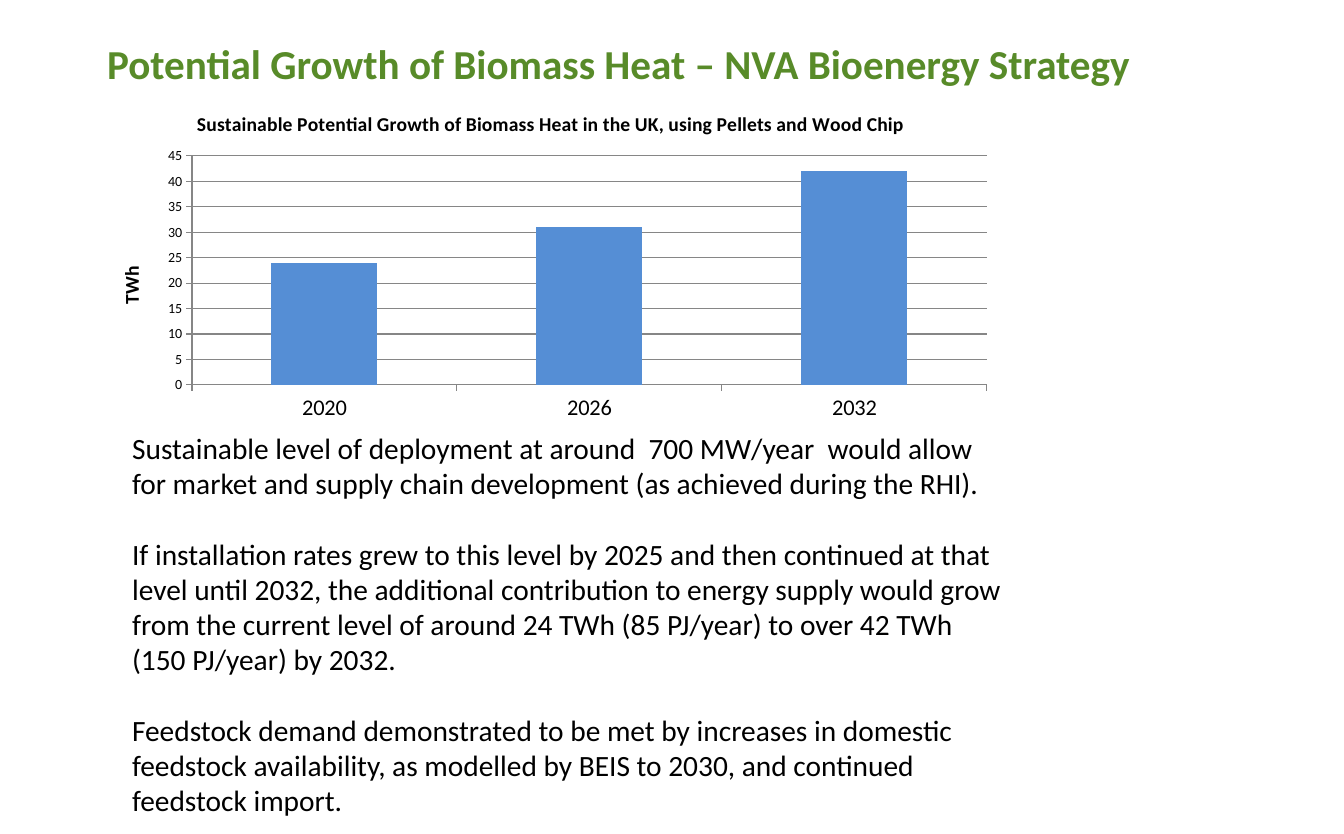
from lxml import etree
from pptx import Presentation
from pptx import util as u
from pptx.chart import data as chart_data
from pptx.dml.color import RGBColor
from pptx.enum import chart as charts, text
from pptx.oxml import ns

PX = 914400 / 100.8
FONT = "Calibri"
COLORS = {"heading": "588B29", "text": "000000", "bar": "558ED5", "axis": "868686"}

HEADING = "Potential Growth of Biomass Heat – NVA Bioenergy Strategy"
CHART_HEADING = ("Sustainable Potential Growth of Biomass Heat in the UK, "
                 "using Pellets and Wood Chip")
HEAT_BY_YEAR = {"2020": 24, "2026": 31, "2032": 42}
FINDINGS = [
    "Sustainable level of deployment at around  700 MW/year  would allow for market "
    "and supply chain development (as achieved during the RHI).",
    "If installation rates grew to this level by 2025 and then continued at that level "
    "until 2032, the additional contribution to energy supply would grow from the current "
    "level of around 24 TWh (85 PJ/year) to over 42 TWh (150 PJ/year) by 2032.",
    "Feedstock demand demonstrated to be met by increases in domestic feedstock "
    "availability, as modelled by BEIS to 2030, and continued feedstock import.",
]


def px(length):
    return u.Emu(round(length * PX))


def color(name):
    return RGBColor.from_string(COLORS[name])


def style(font, size, color_name="text", bold=False):
    font.name = FONT
    font.size = u.Pt(size)
    font.bold = bold
    font.color.rgb = color(color_name)


def fill_placeholder(holder, box, paragraphs, size, color_name="text", bold=False, gap=0):
    """Place a placeholder and write plain, left-aligned paragraphs into it."""
    holder.left, holder.top, holder.width, holder.height = map(px, box)
    frame = holder.text_frame
    frame.word_wrap = True
    frame.auto_size = text.MSO_AUTO_SIZE.NONE
    frame.vertical_anchor = text.MSO_ANCHOR.TOP
    for index, wording in enumerate(paragraphs):
        paragraph = frame.add_paragraph() if index else frame.paragraphs[0]
        paragraph.alignment = text.PP_ALIGN.LEFT
        paragraph.space_before = u.Pt(gap if index else 0)
        # No bullet, no hanging indent
        properties = paragraph._p.get_or_add_pPr()
        properties.set("marL", "0")
        properties.set("indent", "0")
        etree.SubElement(properties, ns.qn("a:buNone"))
        run = paragraph.add_run()
        run.text = wording
        style(run.font, size, color_name, bold)


def write_chart_label(frame, wording, size):
    run = frame.paragraphs[0].add_run()
    run.text = wording
    style(run.font, size, bold=True)


def set_plot_area(chart, box, plot_box):
    """Fix the inner plot area; both boxes are px on the slide."""
    left, top, width, height = box
    plot_left, plot_top, plot_width, plot_height = plot_box
    plot_area = chart._chartSpace.chart.plotArea
    for old in plot_area.findall(ns.qn("c:layout")):
        plot_area.remove(old)
    layout = etree.Element(ns.qn("c:layout"))
    manual = etree.SubElement(layout, ns.qn("c:manualLayout"))
    settings = {
        "layoutTarget": "inner", "xMode": "edge", "yMode": "edge",
        "x": (plot_left - left) / width, "y": (plot_top - top) / height,
        "w": plot_width / width, "h": plot_height / height,
    }
    for tag, value in settings.items():
        etree.SubElement(manual, ns.qn(f"c:{tag}")).set("val", str(value))
    plot_area.insert(0, layout)


def style_axis(axis, size):
    style(axis.tick_labels.font, size)
    axis.major_tick_mark = charts.XL_TICK_MARK.OUTSIDE
    axis.minor_tick_mark = charts.XL_TICK_MARK.NONE
    axis.format.line.color.rgb = color("axis")


def add_heat_chart(slide, box, plot_box):
    heat = chart_data.CategoryChartData()
    heat.categories = list(HEAT_BY_YEAR)
    heat.add_series("Series 1", list(HEAT_BY_YEAR.values()))
    chart = slide.shapes.add_chart(
        charts.XL_CHART_TYPE.COLUMN_CLUSTERED, *map(px, box), heat).chart
    style(chart.font, 10)
    chart.has_legend = False
    chart.has_title = True
    write_chart_label(chart.chart_title.text_frame, CHART_HEADING, 14)
    chart.chart_title.include_in_layout = False
    set_plot_area(chart, box, plot_box)

    # Columns
    columns = chart.plots[0]
    columns.gap_width = 150
    columns.vary_by_categories = False
    bars = columns.series[0].format.fill
    bars.solid()
    bars.fore_color.rgb = color("bar")

    # Axes
    years, energy = chart.category_axis, chart.value_axis
    style_axis(years, 16)
    style_axis(energy, 10)
    energy.minimum_scale, energy.maximum_scale, energy.major_unit = 0, 45, 5
    energy.tick_labels.number_format = "0"
    energy.tick_labels.number_format_is_linked = False
    energy.has_major_gridlines = True
    energy.major_gridlines.format.line.color.rgb = color("axis")
    unit_label = energy.axis_title.text_frame
    write_chart_label(unit_label, "TWh", 14)
    unit_label._txBody.find(ns.qn("a:bodyPr")).set("rot", "-5400000")


def main():
    deck = Presentation()
    deck.slide_width, deck.slide_height = px(1344), px(834)
    slide = deck.slides.add_slide(deck.slide_layouts[1])
    heading, findings = slide.placeholders

    fill_placeholder(heading, (97, 33, 1058, 60), [HEADING], 29.4, "heading", bold=True)
    add_heat_chart(slide, (97, 95, 908, 334), plot_box=(192, 156, 795, 229))
    fill_placeholder(findings, (122, 425, 900, 402), FINDINGS, 21, gap=25)

    deck.save("out.pptx")


if __name__ == "__main__":
    main()
